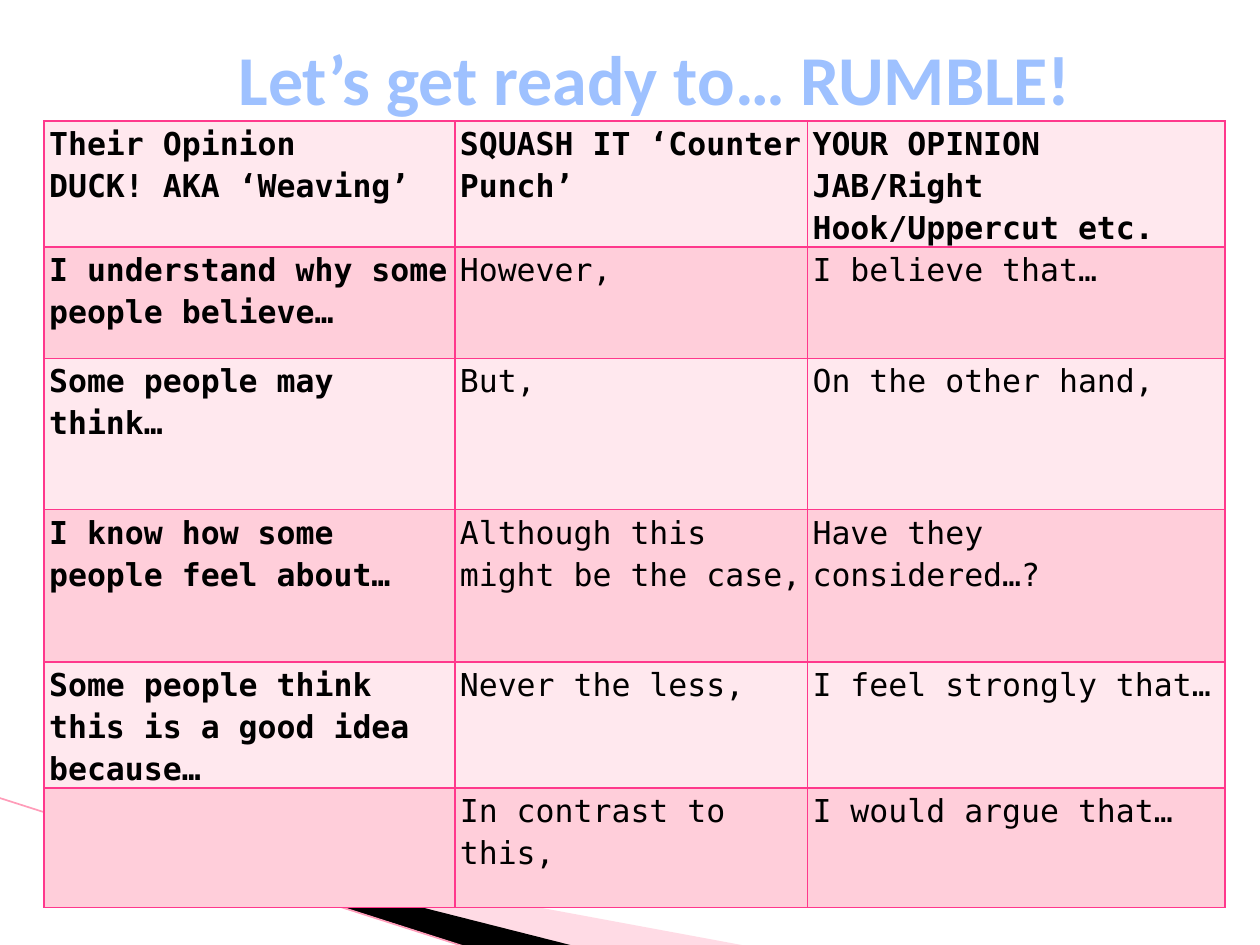
import pptx
import pptx.dml.color
import pptx.enum.text
import pptx.oxml
import pptx.oxml.ns
import pptx.util
from lxml import etree
from pptx.dml.color import RGBColor
from pptx.util import Cm

BLACK = RGBColor(0x00, 0x00, 0x00)
SKY = RGBColor(0x9E, 0xC1, 0xFF)
BLUSH = RGBColor(0xFF, 0xA5, 0xBF)
ROSE = RGBColor(0xFF, 0x9C, 0xB9)
HOT_PINK = RGBColor(0xFF, 0x38, 0x8C)
BANDS = (RGBColor(0xFF, 0xE8, 0xEE), RGBColor(0xFF, 0xCE, 0xDA))

COLUMNS = (8.28, 7.11, 8.41)
ROWS = (2.03, 2.24, 3.05, 3.07, 2.03, 2.41)
PHRASES = (
    ("Their Opinion\nDUCK! AKA ‘Weaving’", "SQUASH IT ‘Counter Punch’",
     "YOUR OPINION\nJAB/Right Hook/Uppercut etc."),
    ("I understand why some people believe…", "However,", "I believe that…"),
    ("Some people may think…", "But,", "On the other hand,"),
    ("I know how some people feel about…", "Although this might be the case,",
     "Have they considered…?"),
    ("Some people think this is a good idea because…", "Never the less,",
     "I feel strongly that…"),
    ("", "In contrast to this,", "I would argue that…"),
)


def add_child(parent, tag, **attributes):
    return etree.SubElement(parent, pptx.oxml.ns.qn(tag), attributes)


class SlideBuilder:
    title_font = "Calibri"
    table_font = "DejaVu Sans Mono"
    line_spacing = 1.15

    def __init__(self, page):
        self.page = page

    def style(self, paragraph, name, size, color, bold):
        paragraph.line_spacing = self.line_spacing
        font = paragraph.font
        font.name, font.size, font.bold = name, pptx.util.Pt(size), bold
        font.color.rgb = color

    def wedge(self, points, color, opacity=100):
        corners = [(Cm(x), Cm(y)) for x, y in points]
        builder = self.page.shapes.build_freeform(*corners[0])
        builder.add_line_segments(corners[1:])
        shape = builder.convert_to_shape()
        shape.shadow.inherit = False
        shape.line.fill.background()
        shape.fill.solid()
        shape.fill.fore_color.rgb = color
        if opacity < 100:
            tint = shape.fill._xPr.find(".//" + pptx.oxml.ns.qn("a:srgbClr"))
            add_child(tint, "a:alpha", val=str(opacity * 1000))

    def line(self, start, end, color, width):
        connector = self.page.shapes.add_connector(
            pptx.enum.shapes.MSO_CONNECTOR.STRAIGHT,
            *(Cm(length) for length in start + end))
        connector.line.color.rgb = color
        connector.line.width = pptx.util.Pt(width)
        add_child(connector._element.spPr, "a:effectLst")

    def title(self, text, left, top, width, height):
        box = self.page.shapes.add_textbox(Cm(left), Cm(top), Cm(width), Cm(height))
        box.text_frame.word_wrap = True
        box.text_frame.auto_size = pptx.enum.text.MSO_AUTO_SIZE.SHAPE_TO_FIT_TEXT
        paragraph = box.text_frame.paragraphs[0]
        paragraph.text = text
        paragraph.alignment = pptx.enum.text.PP_ALIGN.CENTER
        self.style(paragraph, self.title_font, 40, SKY, True)

    def cell(self, cell, text, fill, bold):
        cell.margin_left = cell.margin_right = Cm(0.1)
        cell.margin_top = cell.margin_bottom = 0
        cell.text = text
        for paragraph in cell.text_frame.paragraphs:
            self.style(paragraph, self.table_font, 18, BLACK, bold)
        # Borders come before the fill in the cell properties
        properties = cell._tc.get_or_add_tcPr()
        for side in ("a:lnL", "a:lnR", "a:lnT", "a:lnB"):
            border = add_child(properties, side, w=str(pptx.util.Pt(1)))
            add_child(add_child(border, "a:solidFill"), "a:srgbClr", val=str(HOT_PINK))
        cell.fill.solid()
        cell.fill.fore_color.rgb = fill

    def table(self, left, top, columns, rows, phrases):
        table = self.page.shapes.add_table(
            len(rows), len(columns), Cm(left), Cm(top),
            Cm(sum(columns)), Cm(sum(rows))).table
        for column, width in zip(table.columns, columns):
            column.width = Cm(width)
        for r, (row, height) in enumerate(zip(table.rows, rows)):
            row.height = Cm(height)
            for c, cell in enumerate(row.cells):
                self.cell(cell, phrases[r][c], BANDS[r % 2], r == 0 or c == 0)


def main():
    deck = pptx.Presentation()
    deck.slide_width, deck.slide_height = Cm(25.4), Cm(19.05)
    slide = SlideBuilder(deck.slides.add_slide(deck.slide_layouts[6]))

    # Sweeping wedges at the bottom
    slide.wedge([(1.4, 16.54), (15.11, 19.08), (11.58, 19.08), (1.4, 16.51)], BLUSH, 40)
    slide.wedge([(1.35, 16.48), (11.61, 19.08), (9.45, 19.1), (1.37, 16.51)], BLACK)
    slide.line((-0.03, 16.08), (9.42, 19.1), ROSE, 0.95)

    # Sentence starters and title
    slide.table(0.89, 2.44, COLUMNS, ROWS, PHRASES)
    slide.title("Let’s get ready to… RUMBLE!", 3.5, 0.33, 19.4, 2.1)

    deck.save("out.pptx")


if __name__ == "__main__":
    main()
